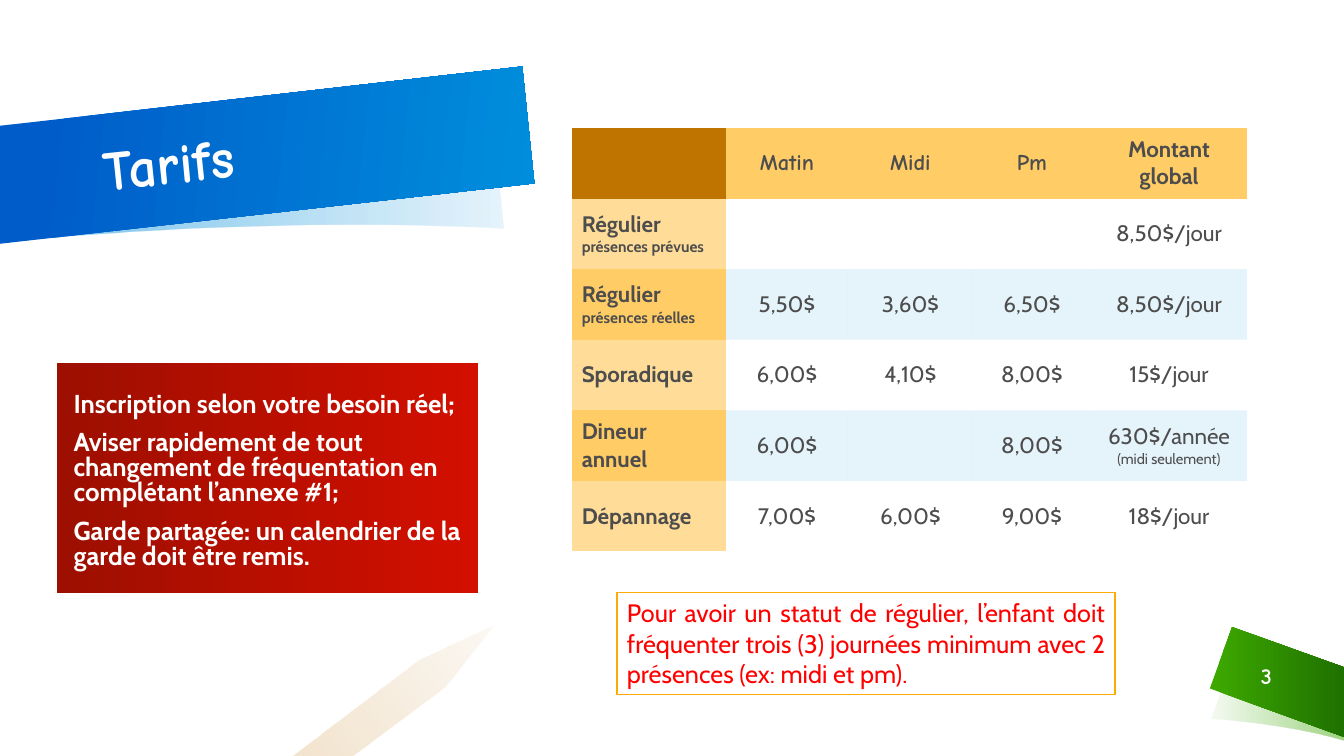
from lxml import etree
from pptx import Presentation
from pptx.dml.color import RGBColor
from pptx.enum import shapes, text
from pptx.oxml.ns import qn
from pptx.util import Inches, Pt

COLORS = {
    "white": "FFFFFF", "grey": "4D4D4D", "blue": "005CC9", "sky": "008EDC",
    "green": "3DA800", "dark_green": "1F7100", "red": "D30F00",
    "dark_red": "9D0F00", "note": "FF0000", "amber": "FFAA00",
    "brown": "C07400", "header": "FFCC66", "light_header": "FFDD99",
}
BODY, HAND = "Cabin", "Comic Neue"
NO_STYLE = "{2D5ABB26-0587-4C30-8999-92F81FD0307C}"
LEFT, CENTER, JUSTIFY = text.PP_ALIGN.LEFT, text.PP_ALIGN.CENTER, text.PP_ALIGN.JUSTIFY

# A line break starts a paragraph; what follows a bar is set small.
RATES = [
    ["", "Matin", "Midi", "Pm", "Montant\nglobal"],
    ["Régulier\n|présences prévues", "", "", "", "8,50$/jour"],
    ["Régulier |présences réelles", "5,50$", "3,60$", "6,50$", "8,50$/jour"],
    ["Sporadique", "6,00$", "4,10$", "8,00$", "15$/jour"],
    ["Dineur annuel", "6,00$", "", "8,00$", "630$/année\n|(midi seulement)"],
    ["Dépannage", "7,00$", "6,00$", "9,00$", "18$/jour"],
]
COLUMN_WIDTHS = [1.53, 1.21, 1.24, 1.17, 1.55]
ROW_HEIGHT = 0.7


def rgb(name):
    return RGBColor.from_string(COLORS[name])


def style(font, size, color, name=BODY, bold=False):
    font.size, font.name, font.bold = Pt(size), name, bold
    font.color.rgb = rgb(color)


def set_alpha(color_element, percent):
    etree.SubElement(color_element, qn("a:alpha"), val=str(percent * 1000))


def fill_gradient(sp, stops, angle):
    """Fill with two (position, colour, opacity) stops, percentages, angle clockwise."""
    sp.fill.gradient()
    sp.fill.gradient_angle = (360 - angle) % 360
    for stop, (position, color, _) in zip(sp.fill.gradient_stops, stops):
        stop.position = position / 100
        stop.color.rgb = rgb(color)
    elements = list(sp._element.spPr.iter(qn("a:srgbClr")))
    for element, (_, _, opacity) in zip(elements, stops):
        if opacity < 100:
            set_alpha(element, opacity)


def curve(p0, p1, p2, p3, steps=24):
    """Points along a cubic Bézier curve."""
    points = []
    for i in range(steps + 1):
        t = i / steps
        weights = ((1 - t) ** 3, 3 * t * (1 - t) ** 2, 3 * t * t * (1 - t), t ** 3)
        points.append(tuple(sum(w * p[axis] for w, p in zip(weights, (p0, p1, p2, p3)))
                            for axis in (0, 1)))
    return points


def add_outline(s, points, stops, angle):
    start, *rest = [(Inches(x), Inches(y)) for x, y in points]
    builder = s.shapes.build_freeform(*start)
    builder.add_line_segments(rest, close=True)
    sp = builder.convert_to_shape()
    sp.shadow.inherit = False
    sp.line.fill.background()
    fill_gradient(sp, stops, angle)


def add_box(s, x, y, w, h):
    sp = s.shapes.add_shape(shapes.MSO_SHAPE.RECTANGLE,
                            Inches(x), Inches(y), Inches(w), Inches(h))
    sp.shadow.inherit = False
    sp.line.fill.background()
    return sp


def write(sp, paragraphs, size, color, font=BODY, bold=False, align=LEFT,
          anchor=text.MSO_ANCHOR.MIDDLE, spacing=1.0, gap=0):
    tf = sp.text_frame
    tf.word_wrap = True
    tf.vertical_anchor = anchor
    tf.text = "\n".join(paragraphs)
    for i, p in enumerate(tf.paragraphs):
        p.alignment, p.line_spacing = align, spacing
        p.space_before = Pt(gap if i else 0)
        style(p.runs[0].font, size, color, font, bold)


def add_label(s, x, y, w, h, label, size, align=LEFT, spacing=1.0, rotation=0):
    sp = s.shapes.add_textbox(Inches(x), Inches(y), Inches(w), Inches(h))
    sp.rotation = rotation
    write(sp, [label], size, "white", HAND, True, align, spacing=spacing)


def fill_cell(cell, row, col):
    cell.fill.solid()
    if row == 0:
        color = "header" if col else "brown"
    elif col == 0:
        color = "light_header" if row % 2 else "header"
    else:
        color = "white" if row % 2 else "sky"
    cell.fill.fore_color.rgb = rgb(color)
    if color == "sky":
        set_alpha(next(cell._tc.tcPr.iter(qn("a:srgbClr"))), 10)


def write_cell(cell, content, row, col):
    cell.vertical_anchor = text.MSO_ANCHOR.MIDDLE
    if not content:
        return
    font = HAND if row == 0 and col < 4 else BODY
    bold = row == 0 or col == 0
    small_size = 10.5 if col else 11
    cell.text_frame.text = "\n".join(line.partition("|")[0] for line in content.split("\n"))
    for p, line in zip(cell.text_frame.paragraphs, content.split("\n")):
        p.alignment = CENTER if col else LEFT
        for r in p.runs:
            style(r.font, 16, "grey", font, bold)
        small = line.partition("|")[2]
        if small:
            r = p.add_run()
            r.text = small
            style(r.font, small_size, "grey", font, bold)


def add_rates(s, x, y):
    frame = s.shapes.add_table(len(RATES), len(COLUMN_WIDTHS), Inches(x), Inches(y),
                               Inches(sum(COLUMN_WIDTHS)), Inches(ROW_HEIGHT * len(RATES)))
    table = frame.table
    table.first_row = table.horz_banding = False
    table._tbl.tblPr.find(qn("a:tableStyleId")).text = NO_STYLE
    for column, width in zip(table.columns, COLUMN_WIDTHS):
        column.width = Inches(width)
    for row, contents in enumerate(RATES):
        table.rows[row].height = Inches(ROW_HEIGHT)
        for col, content in enumerate(contents):
            cell = table.cell(row, col)
            fill_cell(cell, row, col)
            write_cell(cell, content, row, col)


def add_decor(s):
    page_fold = (curve((12.02, 7.13), (12.02, 7.13), (12.78, 7.18), (13.33, 7.35))
                 + curve((13.33, 6.68), (12.72, 6.51), (12.24, 6.52), (12.24, 6.52)))
    add_outline(s, page_fold, [(3, "green", 6), (100, "green", 50)], 0)
    add_outline(s, [(13.33, 6.62), (12.22, 6.22), (12, 6.83), (13.33, 7.31)],
                [(3, "green", 100), (100, "dark_green", 100)], 0)
    title_fold = (curve((4.87, 1.13), (4.87, 1.13), (3.13, 0.94), (-0.02, 1.25))
                  + curve((-0.02, 2.41), (2.86, 2.12), (4.99, 2.27), (4.99, 2.27)))
    add_outline(s, title_fold, [(0, "sky", 10), (88, "sky", 50)], 180)
    add_outline(s, [(-0.01, 2.42), (5.3, 1.82), (5.18, 0.66), (-0.01, 1.25)],
                [(9, "blue", 100), (100, "sky", 100)], 6)
    add_outline(s, [(4.9, 6.2), (4.15, 6.55), (2.9, 7.5), (3.5, 7.5), (4.41, 6.82)],
                [(0, "brown", 5), (100, "brown", 20)], 139)


def add_advice(s):
    sp = add_box(s, 0.57, 3.6, 4.17, 2.28)
    fill_gradient(sp, [(0, "red", 100), (100, "dark_red", 100)], 180)
    tf = sp.text_frame
    tf.margin_left, tf.margin_top = Inches(0.16), Inches(0.2)
    tf.margin_right = tf.margin_bottom = Inches(0.12)
    write(sp, ["Inscription selon votre besoin réel;",
               "Aviser rapidement de tout changement de fréquentation en "
               "complétant l’annexe #1;",
               "Garde partagée: un calendrier de la garde doit être remis."],
          18.5, "white", bold=True, spacing=0.8, gap=10)


def add_condition(s):
    sp = add_box(s, 6.12, 5.88, 4.94, 1.01)
    sp.fill.solid()
    sp.fill.fore_color.rgb = rgb("white")
    sp.line.color.rgb = rgb("amber")
    sp.line.width = Pt(1)
    write(sp, ["Pour avoir un statut de régulier, l’enfant doit fréquenter trois (3) "
               "journées minimum avec 2 présences (ex: midi et pm)."],
          18, "note", align=JUSTIFY, anchor=text.MSO_ANCHOR.TOP)


def main():
    prs = Presentation()
    prs.slide_width, prs.slide_height = Inches(13.33), Inches(7.5)
    s = prs.slides.add_slide(prs.slide_layouts[6])
    add_decor(s)
    add_label(s, 0.92, 0.92, 4.33, 1.16, "Tarifs", 40, spacing=0.9, rotation=-6)
    add_advice(s)
    add_rates(s, 5.67, 1.27)
    add_label(s, 12.21, 6.5, 0.7, 0.4, "3", 16, align=CENTER)
    add_condition(s)
    prs.save("out.pptx")


if __name__ == "__main__":
    main()
